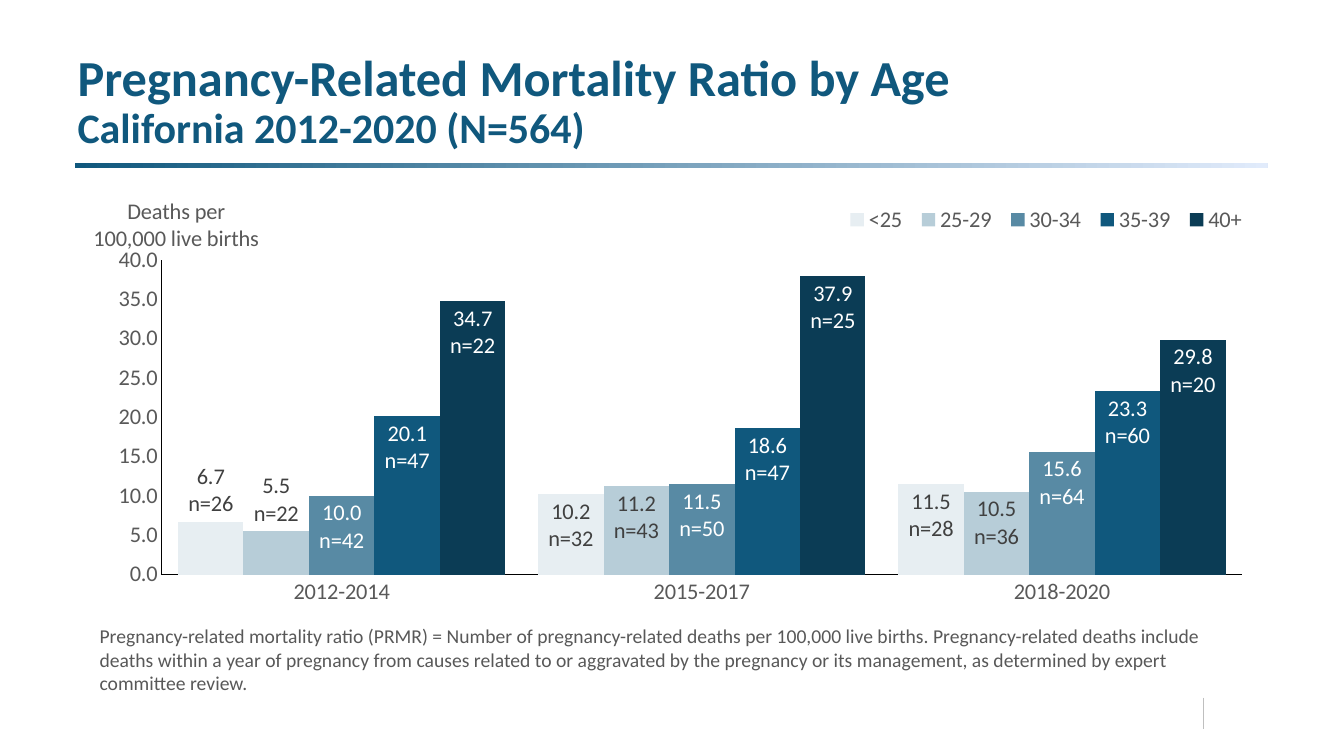
from dataclasses import dataclass

from lxml import etree
from pptx import Presentation
from pptx.chart.axis import _BaseAxis
from pptx.chart.chart import Chart
from pptx.chart.data import CategoryChartData
from pptx.dml.color import RGBColor
from pptx.enum.chart import XL_CHART_TYPE, XL_LABEL_POSITION, XL_LEGEND_POSITION, XL_TICK_MARK
from pptx.enum.shapes import MSO_CONNECTOR, MSO_SHAPE
from pptx.enum.text import MSO_ANCHOR, MSO_AUTO_SIZE, PP_ALIGN
from pptx.oxml.ns import qn
from pptx.slide import Slide
from pptx.text.text import Font, TextFrame
from pptx.util import Cm, Pt

COLUMNS = XL_CHART_TYPE.COLUMN_CLUSTERED
INSIDE_END = XL_LABEL_POSITION.INSIDE_END
OUTSIDE_END = XL_LABEL_POSITION.OUTSIDE_END
TOP_RIGHT = XL_LEGEND_POSITION.CORNER
NO_TICK = XL_TICK_MARK.NONE
STRAIGHT = MSO_CONNECTOR.STRAIGHT
RECTANGLE = MSO_SHAPE.RECTANGLE
BOTTOM = MSO_ANCHOR.BOTTOM
NO_AUTOFIT = MSO_AUTO_SIZE.NONE
LEFT, CENTER = PP_ALIGN.LEFT, PP_ALIGN.CENTER


@dataclass(frozen=True)
class Theme:
    font: str = "Calibri"
    title: str = "10587D"
    rule_end: str = "E1EBFB"
    note: str = "585858"
    axis_text: str = "595959"
    axis_line: str = "000000"
    divider: str = "BFBFBF"
    dark_label: str = "404040"
    light_label: str = "FFFFFF"
    title_size: int = 36
    subtitle_size: int = 30
    chart_size: int = 16
    note_size: int = 14


THEME = Theme()


@dataclass(frozen=True)
class AgeGroup:
    name: str
    ratios: tuple[float, ...]
    deaths: tuple[int, ...]
    color: str
    label_color: str


PERIODS = ("2012-2014", "2015-2017", "2018-2020")
AGE_GROUPS = (
    AgeGroup("<25", (6.7, 10.2, 11.5), (26, 32, 28), "E7EEF2", THEME.dark_label),
    AgeGroup("25-29", (5.5, 11.2, 10.5), (22, 43, 36), "B7CDD8", THEME.dark_label),
    AgeGroup("30-34", (10.0, 11.5, 15.6), (42, 50, 64), "588AA4", THEME.light_label),
    AgeGroup("35-39", (20.1, 18.6, 23.3), (47, 47, 60), "10587D", THEME.light_label),
    AgeGroup("40+", (34.7, 37.9, 29.8), (22, 25, 20), "0B3C55", THEME.light_label),
)
LOWEST_INSIDE_RATIO = 8  # shorter columns carry their label on top

NOTE = (
    "Pregnancy-related mortality ratio (PRMR) = Number of pregnancy-related deaths per "
    "100,000 live births. Pregnancy-related deaths include deaths within a year of pregnancy "
    "from causes related to or aggravated by the pregnancy or its management, as determined "
    "by expert committee review."
)


def rgb(color: str) -> RGBColor:
    return RGBColor.from_string(color)


def format_font(font: Font, size: int, color: str, bold: bool = False) -> None:
    font.name = THEME.font
    font.size = Pt(size)
    font.bold = bold
    font.color.rgb = rgb(color)


def write_text(frame: TextFrame, text: str, *, size: int, color: str,
               bold: bool = False, align: PP_ALIGN = LEFT) -> None:
    """Fill a frame with one paragraph per line of text."""
    frame.text = text
    for para in frame.paragraphs:
        para.alignment = align
        for span in para.runs:
            format_font(span.font, size, color, bold)


def add_title(slide: Slide) -> None:
    title = slide.shapes.title
    title.left, title.top, title.width, title.height = Cm(1.7), Cm(0.91), Cm(30.48), Cm(3.07)
    frame = title.text_frame
    frame.auto_size = NO_AUTOFIT
    frame.vertical_anchor = BOTTOM
    write_text(frame, "Pregnancy-Related Mortality Ratio by Age",
               size=THEME.title_size, color=THEME.title, bold=True)
    para = frame.paragraphs[0]
    para.line_spacing = 0.9
    para.add_line_break()
    span = para.add_run()
    span.text = "California 2012-2020 (N=564)"
    format_font(span.font, THEME.subtitle_size, THEME.title, True)


def add_title_rule(slide: Slide) -> None:
    rule = slide.shapes.add_shape(RECTANGLE, Cm(1.88), Cm(4.11), Cm(30.07), Cm(0.13))
    rule.shadow.inherit = False
    rule.line.fill.background()
    rule.fill.gradient()
    rule.fill.gradient_angle = 0
    for stop, color in zip(rule.fill.gradient_stops, (THEME.title, THEME.rule_end)):
        stop.color.rgb = rgb(color)


def add_page_divider(slide: Slide) -> None:
    divider = slide.shapes.add_connector(STRAIGHT, Cm(30.33), Cm(17.58), Cm(30.33), Cm(18.36))
    divider.line.color.rgb = rgb(THEME.divider)
    divider.line.width = Pt(0.5)
    etree.SubElement(divider._element.spPr, qn("a:effectLst"))


def add_note(slide: Slide) -> None:
    box = slide.shapes.add_textbox(Cm(2.26), Cm(15.6), Cm(28.96), Cm(2.06))
    box.text_frame.word_wrap = True
    write_text(box.text_frame, NOTE, size=THEME.note_size, color=THEME.note)


def set_layout(element: etree._Element, index: int, **settings: float | str) -> None:
    """Place a chart part by fractions of the chart area."""
    for old in element.findall(qn("c:layout")):
        element.remove(old)
    layout = element.makeelement(qn("c:layout"), {})
    element.insert(index, layout)
    manual = etree.SubElement(layout, qn("c:manualLayout"))
    for name, value in settings.items():
        etree.SubElement(manual, qn(f"c:{name}"), val=str(value))


def format_axis(axis: _BaseAxis) -> None:
    axis.has_major_gridlines = False
    axis.major_tick_mark = axis.minor_tick_mark = NO_TICK
    axis.format.line.color.rgb = rgb(THEME.axis_line)
    axis.format.line.width = Pt(0.75)
    format_font(axis.tick_labels.font, THEME.chart_size, THEME.axis_text)


def format_value_axis(chart: Chart) -> None:
    axis = chart.value_axis
    axis.minimum_scale, axis.maximum_scale, axis.major_unit = 0, 40, 5
    axis.tick_labels.number_format = "0.0"
    axis.tick_labels.number_format_is_linked = False
    frame = axis.axis_title.text_frame
    write_text(frame, "Deaths per\n100,000 live births", size=THEME.chart_size,
               color=THEME.axis_text, align=CENTER)
    frame._txBody.bodyPr.set("rot", "0")
    frame._txBody.bodyPr.set("vert", "horz")
    set_layout(axis.axis_title._element, 1, xMode="edge", yMode="edge", x=0.01, y=0.04)


def format_legend(chart: Chart) -> None:
    chart.has_legend = True
    legend = chart.legend
    legend.position = TOP_RIGHT
    legend.include_in_layout = False
    format_font(legend.font, THEME.chart_size, THEME.axis_text)
    set_layout(legend._element, 1, xMode="edge", yMode="edge", x=0.64, y=0.06, w=0.35, h=0.08)


def format_age_groups(chart: Chart) -> None:
    for series, group in zip(chart.plots[0].series, AGE_GROUPS):
        series.format.fill.solid()
        series.format.fill.fore_color.rgb = rgb(group.color)
        labels = series.data_labels
        labels.show_value = True
        labels.number_format = "0.0"
        labels.number_format_is_linked = False
        labels.position = INSIDE_END
        format_font(labels.font, THEME.chart_size, group.label_color)
        for index, (ratio, deaths) in enumerate(zip(group.ratios, group.deaths)):
            label = series.points[index].data_label
            write_text(label.text_frame, f"{ratio:.1f}\nn={deaths}", size=THEME.chart_size,
                       color=group.label_color, align=CENTER)
            label.position = INSIDE_END if ratio > LOWEST_INSIDE_RATIO else OUTSIDE_END


def add_mortality_chart(slide: Slide) -> None:
    ratios = CategoryChartData(number_format="0.0")
    ratios.categories = PERIODS
    for group in AGE_GROUPS:
        ratios.add_series(group.name, group.ratios)
    chart = slide.shapes.add_chart(
        COLUMNS, Cm(1.98), Cm(4.42), Cm(29.92), Cm(11.18), ratios).chart
    chart.has_title = False
    format_font(chart.font, THEME.chart_size, THEME.axis_line)
    plot = chart.plots[0]
    plot.gap_width, plot.overlap, plot.vary_by_categories = 50, 0, False
    format_axis(chart.category_axis)
    format_axis(chart.value_axis)
    format_value_axis(chart)
    format_legend(chart)
    format_age_groups(chart)
    set_layout(chart._chartSpace.chart.plotArea, 0, layoutTarget="inner",
               xMode="edge", yMode="edge", x=0.07, y=0.19, w=0.91, h=0.71)


def main() -> None:
    deck = Presentation()
    deck.slide_width, deck.slide_height = Cm(33.87), Cm(19.05)
    slide = deck.slides.add_slide(deck.slide_layouts.get_by_name("Title Only"))
    add_page_divider(slide)
    add_title_rule(slide)
    add_title(slide)
    add_note(slide)
    add_mortality_chart(slide)
    deck.save("out.pptx")


if __name__ == "__main__":
    main()
